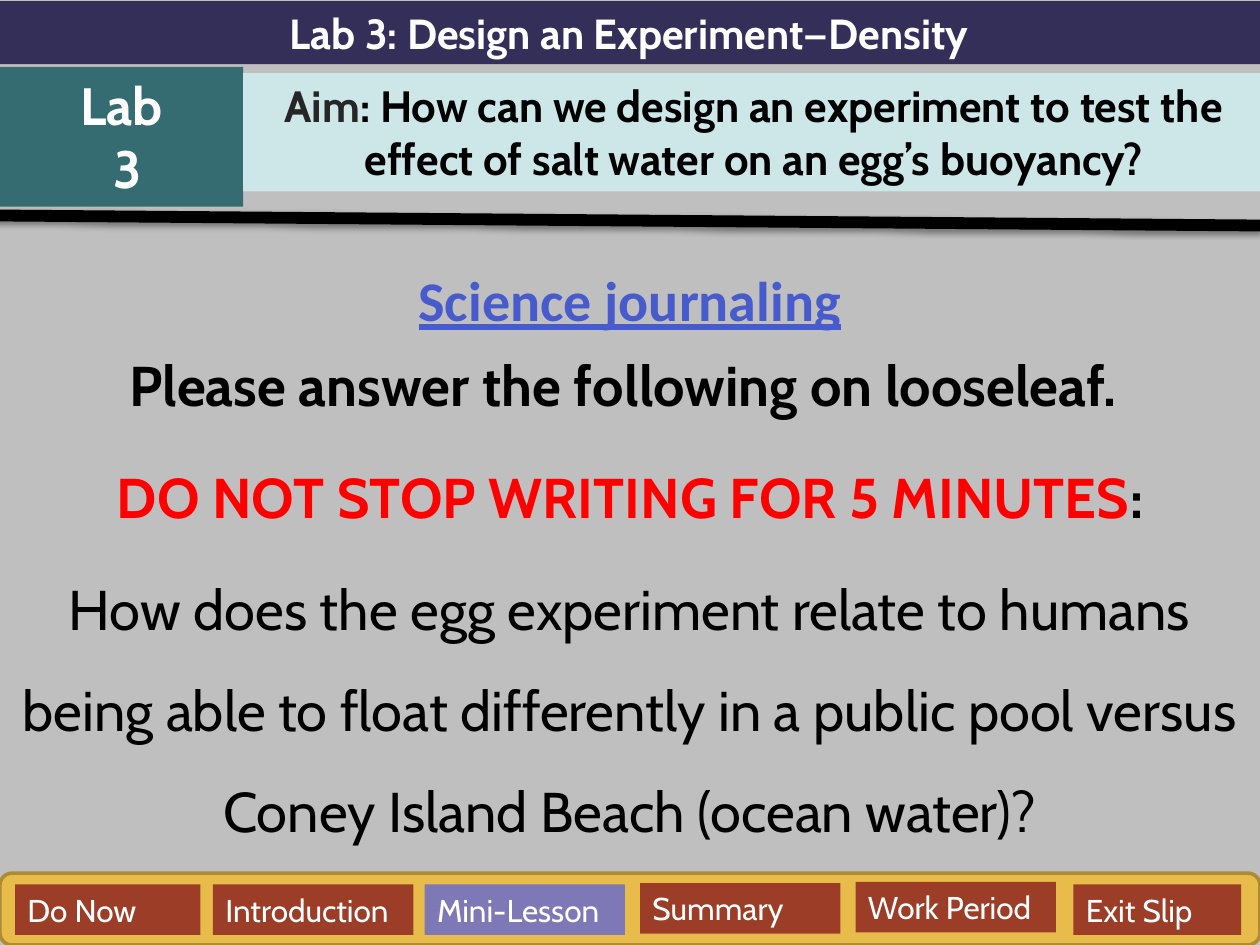
from lxml import etree
from pptx import Presentation
from pptx import util as u
from pptx.dml import color
from pptx.enum import shapes, text
from pptx.oxml import ns

RECT = shapes.MSO_SHAPE.RECTANGLE
CENTER = text.PP_ALIGN.CENTER
LEFT = text.PP_ALIGN.LEFT
WHITE, BLACK, RUST, VIOLET = "FFFFFF", "000000", "9C3D28", "7E78B7"


def paint(target, value):
    target.rgb = color.RGBColor.from_string(value)


def fill(target, value):
    target.fill.solid()
    paint(target.fill.fore_color, value)


def place(item, left, top, width, height):
    item.left, item.top = u.Inches(left), u.Inches(top)
    item.width, item.height = u.Inches(width), u.Inches(height)


def add_span(para, words, size, value, bold=True, underline=False, font="Cabin"):
    span = para.add_run()
    span.text = words
    span.font.name = font
    span.font.size = u.Pt(size)
    span.font.bold = bold
    span.font.underline = underline
    paint(span.font.color, value)


def write(item, lines, size, align=CENTER, bold=True):
    frame = item.text_frame
    frame.word_wrap = True
    frame.auto_size = text.MSO_AUTO_SIZE.NONE
    frame.vertical_anchor = text.MSO_ANCHOR.TOP
    for index, spans in enumerate(lines):
        para = frame.add_paragraph() if index else frame.paragraphs[0]
        para.alignment = align
        for words, value in spans:
            add_span(para, words, size, value, bold)


def add_panel(parent, bounds, value, kind=RECT):
    box = parent.shapes.add_shape(kind, *map(u.Inches, bounds))
    box.shadow.inherit = False
    fill(box, value)
    box.line.fill.background()
    return box


def add_header(page):
    title = page.shapes.title
    place(title, 0, 0.01, 10.06, 0.5)
    fill(title, "342F59")
    write(title, [[("Lab 3: Design an Experiment—Density ", WHITE)]], 24)

    lab = add_panel(page, (0, 0.53, 1.93, 1.11), "346C71")
    write(lab, [[("Lab", WHITE)], [(" 3", WHITE)]], 30)

    aim = add_panel(page, (1.93, 0.58, 8.1, 0.94), "CDE6E8")
    question = ": How can we design an experiment to test the effect of salt water on an egg’s buoyancy?"
    write(aim, [[("Aim", "262626"), (question, BLACK)]], 25)


def add_divider(page):
    ends = map(u.Inches, (-0.05, 1.71, 10, 1.79))
    rule = page.shapes.add_connector(shapes.MSO_CONNECTOR.STRAIGHT, *ends)
    paint(rule.line.color, BLACK)
    rule.line.width = u.Pt(6.75)
    effects = etree.SubElement(rule._element.spPr, ns.qn("a:effectLst"))
    shadow = etree.SubElement(
        effects, ns.qn("a:outerShdw"), blurRad=str(u.Pt(3.1)),
        dist=str(u.Pt(1.6)), dir="5400000", rotWithShape="0")
    tint = etree.SubElement(shadow, ns.qn("a:srgbClr"), val=BLACK)
    etree.SubElement(tint, ns.qn("a:alpha"), val="38000")


def add_journal(page):
    body = page.placeholders[1]
    place(body, 0, 1.79, 10, 5.15)
    prompt = ("How does the egg experiment relate to humans being able to float "
              "differently in a public pool versus Coney Island Beach (ocean water)?")
    write(body, [[], [("Please answer the following on looseleaf. ", BLACK)],
                 [("DO NOT STOP WRITING FOR 5 MINUTES", "FF0000"), (":", BLACK)], []], 32)
    heading, instruction, warning, closing = body.text_frame.paragraphs
    add_span(heading, "Science journaling", 32, "475BCD", underline=True, font="Calibri")
    add_span(closing, prompt, 32, BLACK, bold=False)
    for para in (heading, instruction, warning, closing):
        para.line_spacing = 1.5
        para.space_before = u.Pt(6.4)
    instruction.line_spacing = 1.1


def add_button(parent, label, left, top, width, value):
    button = add_panel(parent, (left, top, width, 0.4), value)
    write(button, [[(label, WHITE)]], 18, LEFT, bold=False)


def add_navigation(page):
    group = page.shapes.add_group_shape()
    bar = add_panel(group, (0, 6.93, 10, 0.57), "E8BC4A",
                    shapes.MSO_SHAPE.ROUNDED_RECTANGLE)
    paint(bar.line.color, "AC8B37")
    bar.line.width = u.Pt(2)
    for parent, label, left, top, width, value in (
            (group, "Mini-Lesson", 3.37, 7.02, 1.59, VIOLET),
            (group, "Summary", 5.08, 7.01, 1.59, RUST),
            (group, "Work Period", 6.79, 7, 1.59, RUST),
            (group, "Exit Slip", 8.52, 7.02, 1.33, RUST),
            (page, "Do Now", 0.12, 7.02, 1.47, RUST),
            (page, "Introduction", 1.69, 7.02, 1.59, RUST)):
        add_button(parent, label, left, top, width, value)


def main():
    deck = Presentation()
    deck.slide_width, deck.slide_height = u.Inches(10), u.Inches(7.5)
    page = deck.slides.add_slide(deck.slide_layouts[0])
    fill(page.background, "BFBFBF")
    add_journal(page)
    add_header(page)
    add_divider(page)
    add_navigation(page)
    deck.save("out.pptx")


if __name__ == "__main__":
    main()
